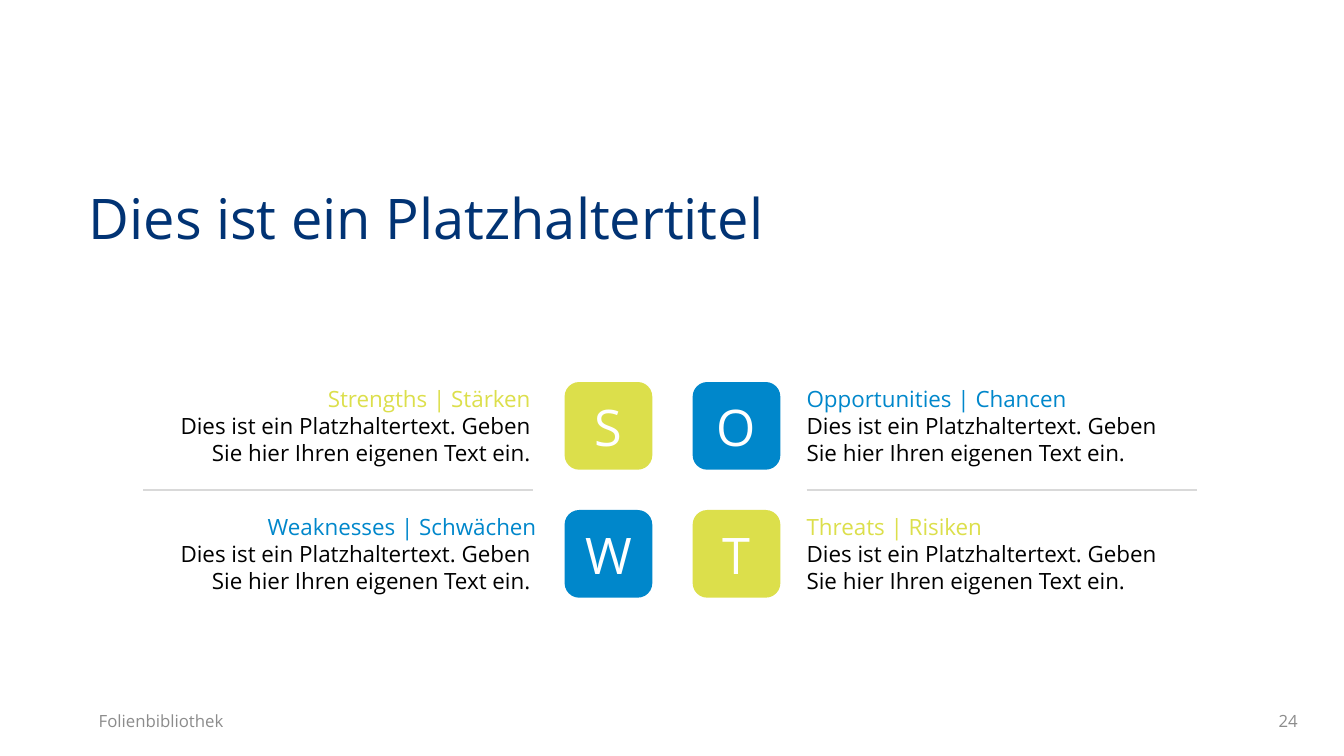
"""Build a SWOT slide with four lettered tiles and their descriptions."""
from lxml.etree import SubElement
from pptx import Presentation
from pptx.dml.color import RGBColor
from pptx.enum.shapes import MSO_CONNECTOR, MSO_SHAPE
from pptx.enum.text import MSO_ANCHOR, MSO_AUTO_SIZE, PP_ALIGN
from pptx.oxml.ns import qn
from pptx.util import Inches, Pt

TITLE = "Dies ist ein Platzhaltertitel"
FOOTER = "Folienbibliothek"
PAGE_NUMBER = "24"
BODY = ["Dies ist ein Platzhaltertext. Geben ", "Sie hier Ihren eigenen Text ein. "]
LIME, BLUE, NAVY = "DCDF4B", "0087CB", "013374"
GREY, RULE, BLACK, WHITE = "8C8C8C", "D9D9D9", "000000", "FFFFFF"
QUADRANTS = [
    ("S", "Strengths | Stärken ", LIME, 0, 0),
    ("O", "Opportunities | Chancen", BLUE, 1, 0),
    ("W", "Weaknesses | Schwächen", BLUE, 0, 1),
    ("T", "Threats | Risiken", LIME, 1, 1),
]

TILE, PITCH = 0.87, 1.27
TILE_LEFT, TILE_TOP = 5.6, 3.79
TEXT_LEFTS, TEXT_WIDTH, TEXT_GAP = (0.88, 7.72), 4.72, 0.28
RULE_LEFTS, RULE_WIDTH, RULE_TOP = (1.42, 8), 3.87, 4.86
FOOTER_TOP, FOOTER_HEIGHT = 6.95, 0.4


def color(hex_value):
    return RGBColor.from_string(hex_value)


def box(left, top, width, height):
    return [Inches(value) for value in (left, top, width, height)]


def set_frame(frame, insets=(0.1, 0.05, 0.1, 0.05), anchor=MSO_ANCHOR.MIDDLE):
    sides = ("margin_left", "margin_top", "margin_right", "margin_bottom")
    values = dict(zip(sides, map(Inches, insets)))
    values |= {"word_wrap": True, "auto_size": MSO_AUTO_SIZE.NONE,
               "vertical_anchor": anchor}
    for name, value in values.items():
        setattr(frame, name, value)


def write(frame, lines, size, align=PP_ALIGN.LEFT):
    paragraph = frame.paragraphs[0]
    paragraph.alignment = align
    for index, (text, shade) in enumerate(lines):
        if index:
            paragraph.add_line_break()
        run = paragraph.add_run()
        run.text = text
        for name, value in {"name": "Open Sans", "size": Pt(size), "bold": False}.items():
            setattr(run.font, name, value)
        run.font.color.rgb = color(shade)
    paragraph.font.size = Pt(size)
    return paragraph


def add_text(slide, place, lines, size, align, **frame_format):
    frame = slide.shapes.add_textbox(*box(*place)).text_frame
    set_frame(frame, **frame_format)
    write(frame, lines, size, align)


def add_title(slide):
    title = slide.shapes.title
    title.left, title.top, title.width, title.height = box(0.88, 1.9, 11.54, 0.9)
    set_frame(title.text_frame, (0, 0, 0, 0), MSO_ANCHOR.TOP)
    write(title.text_frame, [(TITLE, NAVY)], 40).line_spacing = 0.9


def add_quadrant(slide, letter, heading, shade, column, row):
    top = TILE_TOP + row * PITCH
    tile = slide.shapes.add_shape(
        MSO_SHAPE.ROUNDED_RECTANGLE,
        *box(TILE_LEFT + column * PITCH, top, TILE, TILE))
    tile.shadow.inherit = False
    tile.fill.solid()
    tile.fill.fore_color.rgb = color(shade)
    tile.line.fill.background()
    set_frame(tile.text_frame)
    write(tile.text_frame, [(letter, WHITE)], 36, PP_ALIGN.CENTER)

    lines = [(heading, shade)] + [(text, BLACK) for text in BODY]
    insets = (TEXT_GAP, 0, 0, 0) if column else (0, 0, TEXT_GAP, 0)
    align = PP_ALIGN.LEFT if column else PP_ALIGN.RIGHT
    add_text(slide, (TEXT_LEFTS[column], top, TEXT_WIDTH, TILE), lines, 16, align,
             insets=insets)


def add_rule(slide, left):
    rule = slide.shapes.add_connector(
        MSO_CONNECTOR.STRAIGHT, Inches(left), Inches(RULE_TOP),
        Inches(left + RULE_WIDTH), Inches(RULE_TOP))
    rule.line.color.rgb = color(RULE)
    rule.line.width = Pt(1)
    SubElement(rule.element.spPr, qn("a:effectLst"))


def main():
    deck = Presentation()
    deck.slide_width, deck.slide_height = Inches(13.33), Inches(7.5)
    slide = deck.slides.add_slide(deck.slide_layouts[5])
    add_title(slide)
    for quadrant in QUADRANTS:
        add_quadrant(slide, *quadrant)
    for left in RULE_LEFTS:
        add_rule(slide, left)
    add_text(slide, (0.88, FOOTER_TOP, 8.04, FOOTER_HEIGHT), [(FOOTER, GREY)], 12,
             PP_ALIGN.LEFT)
    add_text(slide, (9.97, FOOTER_TOP, 3, FOOTER_HEIGHT), [(PAGE_NUMBER, GREY)], 12,
             PP_ALIGN.RIGHT)
    deck.save("out.pptx")


if __name__ == "__main__":
    main()
